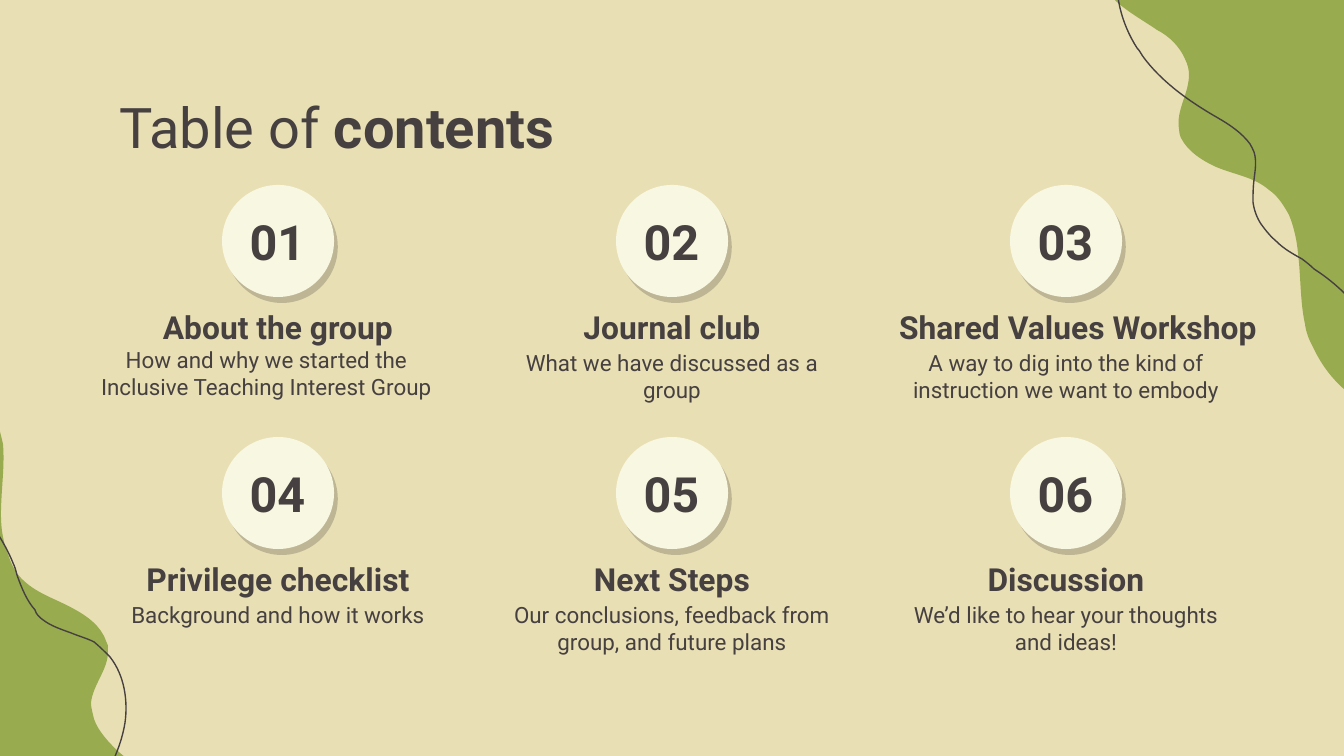
from dataclasses import dataclass

from pptx import Presentation
from pptx import util as u
from pptx.dml.color import RGBColor
from pptx.enum import shapes, text
from pptx.oxml import parse_xml
from pptx.oxml.ns import nsdecls, qn
from pptx.oxml.xmlchemy import OxmlElement

PX = 914400 / 134.4
WIDE, HIGH = 1344, 756


@dataclass(frozen=True)
class Theme:
    sand: str = "E9DFB4"
    leaf: str = "98AB4F"
    cream: str = "F8F7E1"
    ink: str = "464040"
    font: str = "Roboto"
    head: int = 30
    num: int = 26
    name: int = 17
    body: int = 12
    line: float = 0.75


T = Theme()
TOPICS = [
    ("About the group", "How and why we started the Inclusive Teaching Interest Group"),
    ("Journal club", "What we have discussed as a group"),
    ("Shared Values Workshop", "A way to dig into the kind of instruction we want to embody"),
    ("Privilege checklist", "Background and how it works"),
    ("Next Steps", "Our conclusions, feedback from group, and future plans"),
    ("Discussion", "We’d like to hear your thoughts and ideas!"),
]
# Boxes that leave the grid: (left, top, width, height) inside the cell
NAME_AT = {2: (-37, 108, 442, 66)}
BODY_AT = {0: (-33, 148, 387, 89)}

# Each curve: a start point, then rows of two control points and an end point
TOP_HILL = (1103, -17), [
    (1105, -13, 1107, -9, 1110, -5), (1122, 9, 1141, 19, 1157, 30),
    (1169, 36, 1180, 47, 1185, 59), (1188, 65, 1189, 70, 1189, 75),
    (1189, 94, 1176, 110, 1179, 129), (1179, 132, 1180, 136, 1181, 138),
    (1188, 152, 1203, 161, 1216, 167), (1235, 175, 1254, 177, 1269, 190),
    (1278, 196, 1284, 206, 1289, 215), (1294, 227, 1297, 241, 1298, 253),
    (1301, 277, 1300, 301, 1305, 324), (1306, 332, 1309, 340, 1313, 347),
    (1324, 371, 1341, 390, 1363, 403), (1382, 414, 1433, 438, 1453, 419),
    (1458, 415, 1460, 407, 1458, 401), (1440, 350, 1439, 310, 1439, 276),
    (1439, 211, 1421, 130, 1390, 67), (1350, -18, 1300, -80, 1239, -113),
    (1180, -140, 1070, -90, 1103, -17)]
TOP_VINE = (1220, -142), [
    (1199, -130, 1176, -116, 1157, -98), (1142, -85, 1124, -62, 1118, -32),
    (1114, -7, 1121, 23, 1137, 48), (1140, 51, 1141, 54, 1144, 58),
    (1160, 79, 1183, 98, 1218, 118), (1230, 125, 1242, 133, 1250, 144),
    (1251, 146, 1253, 149, 1254, 152), (1257, 161, 1255, 171, 1254, 180),
    (1253, 188, 1253, 195, 1253, 202), (1254, 210, 1257, 218, 1261, 224),
    (1266, 231, 1271, 237, 1277, 242), (1284, 249, 1293, 254, 1302, 259),
    (1306, 262, 1310, 265, 1314, 269), (1339, 285, 1359, 306, 1375, 332),
    (1394, 362, 1406, 395, 1410, 430), (1411, 446, 1411, 473, 1419, 491),
    (1427, 514, 1444, 527, 1464, 527)]
LOW_HILL = (168, 804), [
    (167, 800, 165, 796, 163, 792), (152, 775, 134, 765, 120, 753),
    (109, 743, 98, 731, 94, 719), (93, 714, 91, 708, 91, 703),
    (93, 684, 109, 669, 108, 650), (108, 646, 108, 644, 106, 641),
    (101, 626, 87, 616, 74, 609), (56, 599, 38, 594, 24, 581),
    (16, 574, 11, 564, 8, 554), (3, 542, 1, 528, 1, 515),
    (1, 491, 5, 466, 3, 444), (1, 435, -1, 427, -4, 419),
    (-12, 395, -27, 374, -47, 359), (-65, 347, -114, 317, -136, 333),
    (-143, 340, -145, 350, -138, 374), (-134, 400, -132, 440, -137, 478),
    (-144, 550, -132, 620, -109, 689), (-80, 780, -40, 850, 23, 886),
    (80, 920, 190, 880, 168, 804)]
LOW_VINE = (-191, 461), [
    (-151, 450, -106, 454, -70, 473), (-47, 485, -27, 501, -11, 521),
    (-1, 535, 7, 548, 13, 563), (15, 567, 16, 571, 17, 575),
    (22, 589, 27, 601, 35, 610), (36, 614, 39, 617, 43, 620),
    (51, 626, 60, 629, 71, 633), (78, 636, 86, 638, 94, 642),
    (99, 646, 105, 652, 110, 657), (125, 676, 128, 702, 125, 723),
    (120, 754, 103, 782, 87, 808)]


def emu(*sides):
    return [u.Emu(round(side * PX)) for side in sides]


def rgb(code):
    return RGBColor.from_string(code)


def paint(fill, code):
    fill.solid()
    fill.fore_color.rgb = rgb(code)


def curve(slide, box, start, bends, close):
    """Build a freeform and bend each of its segments into a cubic curve."""
    left, top = box[:2]
    ends = [start] + [bend[4:] for bend in bends]
    build = slide.shapes.build_freeform(left + start[0], top + start[1], PX)
    build.add_line_segments([(left + x, top + y) for x, y in ends[1:]], close=close)
    shape = build.convert_to_shape()
    shape.shadow.inherit = False
    minx, miny = (min(axis) for axis in zip(*ends))
    for line, bend in zip(list(shape.element.iter(qn("a:lnTo"))), bends):
        cubic = OxmlElement("a:cubicBezTo")
        for x, y in zip(bend[::2], bend[1::2]):
            point = OxmlElement("a:pt")
            point.set("x", str(x - minx))
            point.set("y", str(y - miny))
            cubic.append(point)
        line.getparent().replace(line, cubic)
    return shape


def corner(slide, box, hill, vine):
    shape = curve(slide, box, *hill, True)
    paint(shape.fill, T.leaf)
    shape.line.fill.background()
    shape = curve(slide, box, *vine, False)
    shape.fill.background()
    paint(shape.line.fill, T.ink)
    shape.line.width = u.Pt(T.line)


def label(slide, box, runs, size, align="CENTER", anchor="TOP"):
    """Place one paragraph; runs are (words, bold) pairs."""
    frame = slide.shapes.add_textbox(*emu(*box)).text_frame
    look = {"word_wrap": True, "vertical_anchor": text.MSO_ANCHOR[anchor]}
    look.update({f"margin_{side}": u.Inches(0.1) for side in ("left", "right", "top", "bottom")})
    for key, value in look.items():
        setattr(frame, key, value)
    para = frame.paragraphs[0]
    para.alignment = text.PP_ALIGN[align]
    for words, bold in runs:
        run = para.add_run()
        run.text = words
        for key, value in {"name": T.font, "size": u.Pt(size), "bold": bold}.items():
            setattr(run.font, key, value)
        run.font.color.rgb = rgb(T.ink)


def disc(slide, box):
    shape = slide.shapes.add_shape(shapes.MSO_SHAPE.OVAL, *emu(*box))
    shape.shadow.inherit = False
    paint(shape.fill, T.cream)
    shape.line.fill.background()
    glow = shape.element.spPr.find(qn("a:effectLst"))
    glow.append(parse_xml(
        f'<a:outerShdw {nsdecls("a")} dist="48260" dir="3480000" algn="bl" rotWithShape="0">'
        f'<a:srgbClr val="{T.ink}"><a:alpha val="25000"/></a:srgbClr></a:outerShdw>'))


def topic(slide, box, index):
    left, top, wide, _ = box
    name, body = TOPICS[index]

    def place(x, y, w, h):
        return left + x, top + y, w, h

    disc(slide, place((wide - 112) // 2, 0, 112, 112))
    label(slide, place((wide - 153) // 2, 23, 153, 66), [(f"{index + 1:02}", True)],
          T.num, anchor="MIDDLE")
    label(slide, place(*NAME_AT.get(index, (0, 108, wide, 66))), [(name, True)],
          T.name, anchor="BOTTOM")
    label(slide, place(*BODY_AT.get(index, (0, 151, wide, 89))), [(body, False)], T.body)


def grid(slide, box):
    left, top, wide, high = box
    cell, tall, cols = 344, 240, 3
    across = (wide - cell) // (cols - 1)
    for index in range(len(TOPICS)):
        row, col = divmod(index, cols)
        topic(slide, (left + col * across, top + row * (high - tall), cell, tall), index)


def main():
    deck = Presentation()
    deck.slide_width, deck.slide_height = emu(WIDE, HIGH)
    slide = deck.slides.add_slide(deck.slide_layouts[6])
    paint(slide.background.fill, T.sand)
    page = (0, 0, WIDE, HIGH)
    corner(slide, page, TOP_HILL, TOP_VINE)
    corner(slide, page, LOW_HILL, LOW_VINE)
    label(slide, (106, 79, 1133, 93), [("Table of ", False), ("contents", True)],
          T.head, align="LEFT")
    grid(slide, (106, 185, 1132, 492))
    deck.save("out.pptx")


if __name__ == "__main__":
    main()
